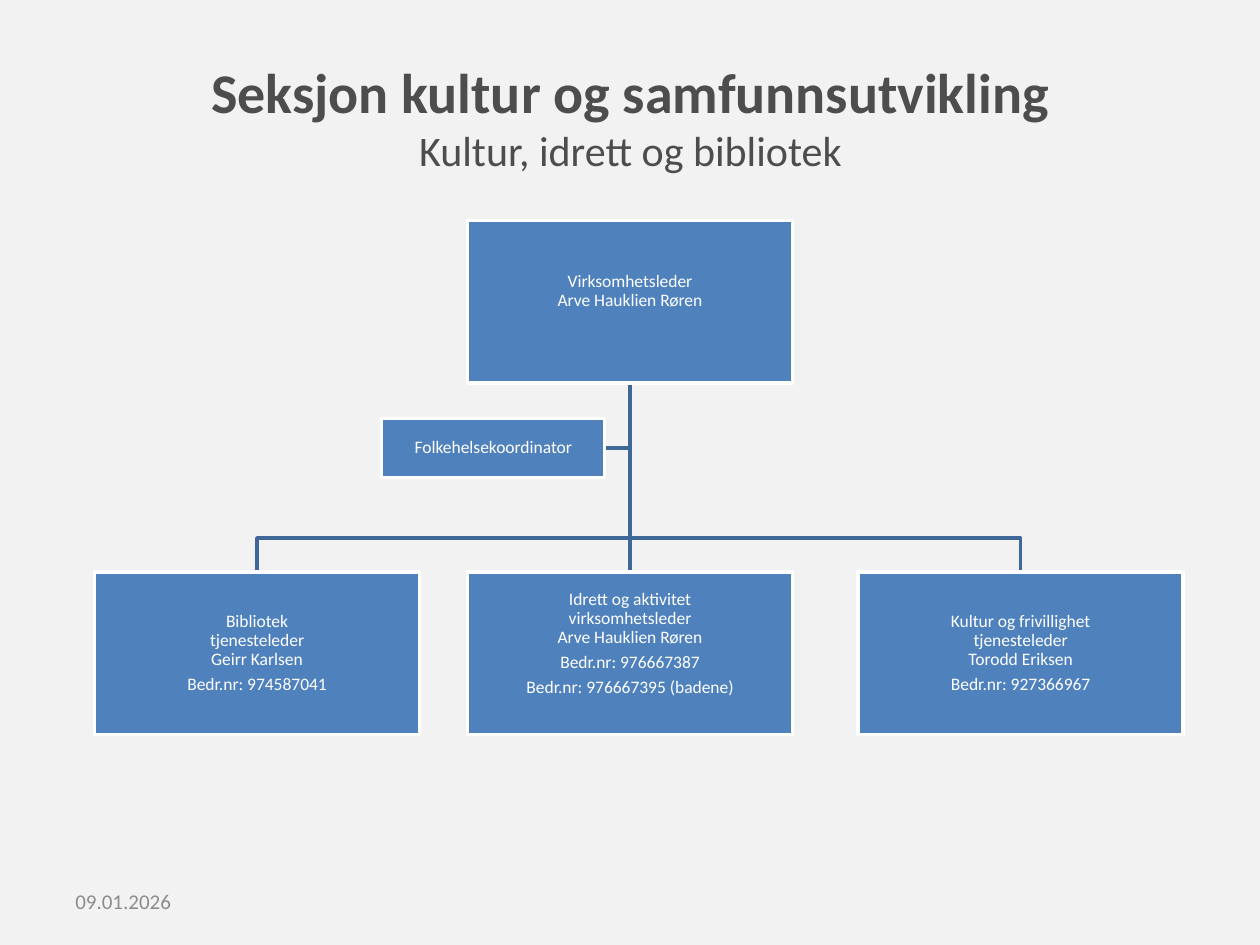
"""Build the organisation chart slide for culture, sports and library."""
import pptx
import pptx.dml.color
import pptx.enum.shapes
import pptx.enum.text
import pptx.oxml.ns
import pptx.util
from lxml import etree

Inches = pptx.util.Inches
Pt = pptx.util.Pt
RGBColor = pptx.dml.color.RGBColor
ALIGN = pptx.enum.text.PP_ALIGN

BACKGROUND = RGBColor(0xF2, 0xF2, 0xF2)
TITLE_GREY = RGBColor(0x4D, 0x4D, 0x4D)
DATE_GREY = RGBColor(0x8C, 0x8C, 0x8C)
BOX_BLUE = RGBColor(0x4F, 0x81, 0xBD)
LINE_BLUE = RGBColor(0x3F, 0x67, 0x97)
WHITE = RGBColor(0xFF, 0xFF, 0xFF)

TITLE = [("Seksjon kultur og samfunnsutvikling", 32, True),
         ("Kultur, idrett og bibliotek", 24, False)]
DATE = "09.01.2026"
LEADER = ["Virksomhetsleder\vArve Hauklien Røren"]
ASSISTANT = ["Folkehelsekoordinator"]
UNITS = [
    (0.75, 0, ["Bibliotek\vtjenesteleder\vGeirr Karlsen", "Bedr.nr: 974587041"]),
    (3.71, 0.15, ["Idrett og aktivitet\vvirksomhetsleder\vArve Hauklien Røren",
                  "Bedr.nr: 976667387", "Bedr.nr: 976667395 (badene)"]),
    (6.81, 0, ["Kultur og frivillighet\vtjenesteleder\vTorodd Eriksen",
               "Bedr.nr: 927366967"]),
]

BOX_WIDTH, BOX_HEIGHT = 2.58, 1.29
LEADER_LEFT, LEADER_TOP = 3.71, 1.75
UNIT_TOP, BRANCH_Y = 4.54, 4.27
ASSISTANT_LEFT, ASSISTANT_TOP, ASSISTANT_WIDTH, ASSISTANT_HEIGHT = 3.03, 3.32, 1.77, 0.47
TRUNK_X = LEADER_LEFT + BOX_WIDTH / 2
TRUNK_Y = LEADER_TOP + BOX_HEIGHT


def add_text(paragraph, text, *, size, color, bold=False, align=ALIGN.CENTER):
    """Append one formatted run per line of text to a paragraph."""
    paragraph.alignment = align
    for index, line in enumerate(text.split("\v")):
        if index:
            paragraph.add_line_break()
        span = paragraph.add_run()
        span.text = line
        span.font.name = "Calibri"
        span.font.size = Pt(size)
        span.font.bold = bold
        span.font.color.rgb = color


def add_box(page, left, top, width, height, paragraphs, lift=0):
    """Add a blue box with centred text raised by a larger bottom inset."""
    box = page.shapes.add_shape(pptx.enum.shapes.MSO_SHAPE.RECTANGLE, Inches(left),
                                Inches(top), Inches(width), Inches(height))
    box.shadow.inherit = False
    box.fill.solid()
    box.fill.fore_color.rgb = BOX_BLUE
    box.line.color.rgb = WHITE
    box.line.width = Pt(2)
    frame = box.text_frame
    frame.word_wrap = True
    frame.vertical_anchor = pptx.enum.text.MSO_ANCHOR.MIDDLE
    frame.margin_left = frame.margin_right = frame.margin_top = Inches(0.01)
    frame.margin_bottom = Inches(0.01 + lift)
    for index, text in enumerate(paragraphs):
        paragraph = frame.add_paragraph() if index else frame.paragraphs[0]
        paragraph.line_spacing = 0.9
        paragraph.space_after = Pt(3.5)
        add_text(paragraph, text, size=10, color=WHITE)
    return box


def style_line(line):
    """Give a line the chart's colour and width."""
    line.color.rgb = LINE_BLUE
    line.width = Pt(2)


def add_branch(page, points):
    """Draw an open bent line through the points."""
    start, *rest = [(Inches(x), Inches(y)) for x, y in points]
    builder = page.shapes.build_freeform(*start)
    builder.add_line_segments(rest, close=False)
    branch = builder.convert_to_shape()
    branch.shadow.inherit = False
    branch.fill.background()
    style_line(branch.line)


def add_trunk(page):
    """Draw the straight line from the leader to the middle unit."""
    trunk = page.shapes.add_connector(
        pptx.enum.shapes.MSO_CONNECTOR.STRAIGHT, Inches(TRUNK_X), Inches(TRUNK_Y),
        Inches(TRUNK_X), Inches(UNIT_TOP))
    style_line(trunk.line)
    etree.SubElement(trunk.element.spPr, pptx.oxml.ns.qn("a:effectLst"))
    return trunk


def add_title(page):
    """Fill the title placeholder with the two title lines."""
    title = page.shapes.title
    title.left, title.top, title.width, title.height = map(Inches, (0.51, 0.3, 8.99, 1.25))
    title.text_frame.vertical_anchor = pptx.enum.text.MSO_ANCHOR.MIDDLE
    paragraph = title.text_frame.paragraphs[0]
    for index, (text, size, bold) in enumerate(TITLE):
        if index:
            paragraph.add_line_break()
        add_text(paragraph, text, size=size, color=TITLE_GREY, bold=bold)


def add_date(page):
    """Add the date at the lower left."""
    box = page.shapes.add_textbox(*map(Inches, (0.5, 6.95, 2.33, 0.4)))
    box.text_frame.word_wrap = True
    box.text_frame.vertical_anchor = pptx.enum.text.MSO_ANCHOR.MIDDLE
    add_text(box.text_frame.paragraphs[0], DATE, size=12, color=DATE_GREY, align=ALIGN.LEFT)


def add_chart_boxes(page):
    """Draw the lines of the organisation chart and then its boxes."""
    assistant_y = ASSISTANT_TOP + ASSISTANT_HEIGHT / 2
    add_branch(page, [(TRUNK_X, TRUNK_Y), (TRUNK_X, assistant_y),
                      (ASSISTANT_LEFT + ASSISTANT_WIDTH, assistant_y)])
    for left, _, _ in (UNITS[0], UNITS[2]):
        center = left + BOX_WIDTH / 2
        add_branch(page, [(TRUNK_X, TRUNK_Y), (TRUNK_X, BRANCH_Y),
                          (center, BRANCH_Y), (center, UNIT_TOP)])
    trunk = add_trunk(page)
    leader = add_box(page, LEADER_LEFT, LEADER_TOP, BOX_WIDTH, BOX_HEIGHT, LEADER, lift=0.17)
    units = [add_box(page, left, UNIT_TOP, BOX_WIDTH, BOX_HEIGHT, paragraphs, lift)
             for left, lift, paragraphs in UNITS]
    add_box(page, ASSISTANT_LEFT, ASSISTANT_TOP, ASSISTANT_WIDTH, ASSISTANT_HEIGHT, ASSISTANT)
    trunk.begin_connect(leader, 2)
    trunk.end_connect(units[1], 0)


def main():
    """Build and save the deck."""
    deck = pptx.Presentation()
    deck.slide_width, deck.slide_height = Inches(10), Inches(7.5)
    page = deck.slides.add_slide(deck.slide_layouts[5])
    page.background.fill.solid()
    page.background.fill.fore_color.rgb = BACKGROUND
    add_title(page)
    add_chart_boxes(page)
    add_date(page)
    deck.save("out.pptx")


if __name__ == "__main__":
    main()
